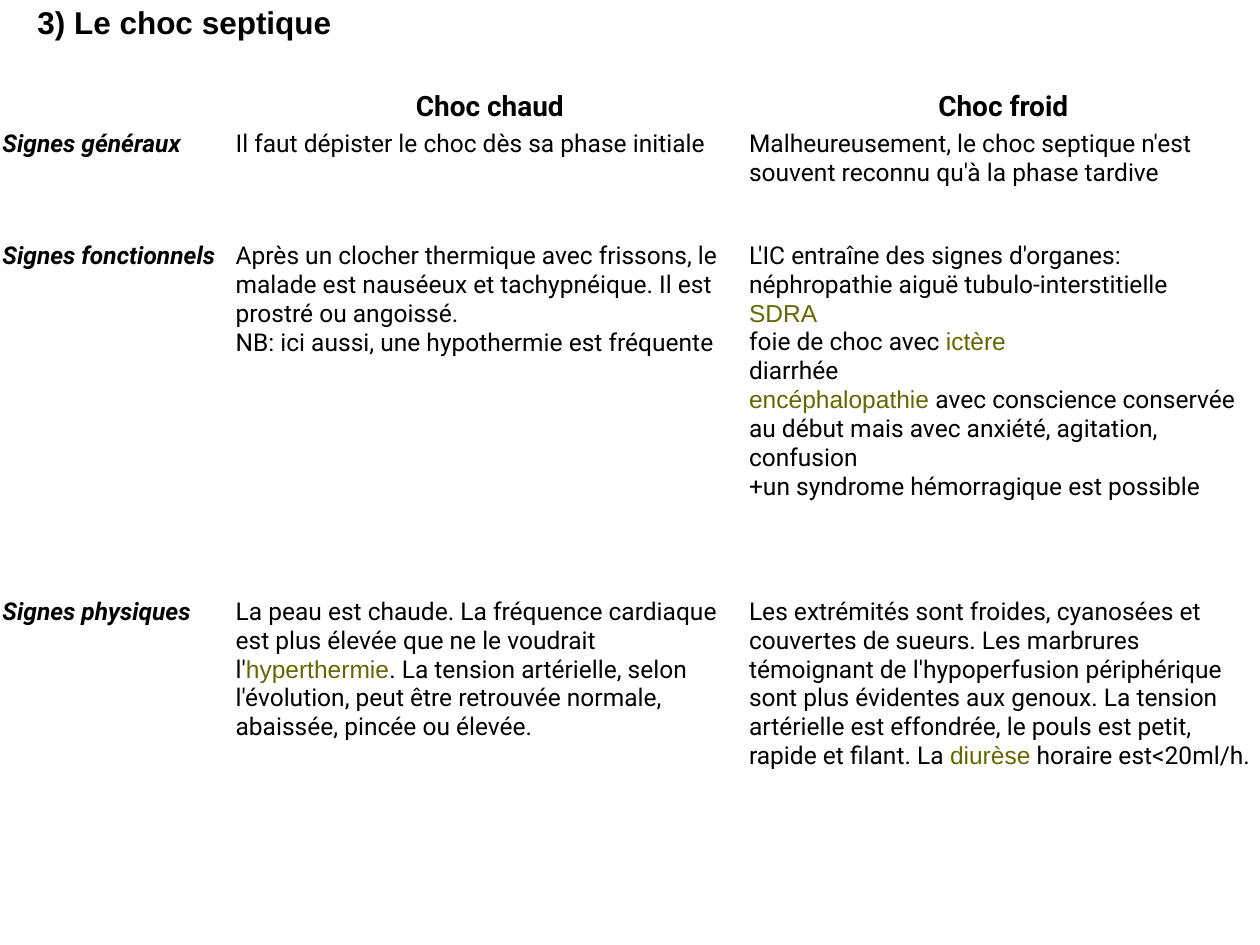
from copy import deepcopy

from pptx import Presentation
from pptx.dml.color import RGBColor
from pptx.enum.text import MSO_ANCHOR as Anchor, PP_ALIGN as Align
from pptx.util import Cm, Pt

COLORS = {"background": "FFFFFF", "text": "000000", "term": "666600"}

# Text between asterisks is a highlighted medical term
ROWS = [
    ["", "Choc chaud", "Choc froid"],
    ["Signes généraux",
     "Il faut dépister le choc dès sa phase initiale",
     "Malheureusement, le choc septique n'est souvent reconnu qu'à la phase tardive"],
    ["Signes fonctionnels",
     "Après un clocher thermique avec frissons, le malade est nauséeux et "
     "tachypnéique. Il est prostré ou angoissé.\n"
     "NB: ici aussi, une hypothermie est fréquente",
     "L'IC entraîne des signes d'organes:\n"
     "néphropathie aiguë tubulo-interstitielle\n"
     "*SDRA\n*foie de choc avec *ictère\n*diarrhée\n"
     "*encéphalopathie* avec conscience conservée au début mais avec anxiété, "
     "agitation, confusion\n"
     "+un syndrome hémorragique est possible"],
    ["Signes physiques",
     "La peau est chaude. La fréquence cardiaque est plus élevée que ne le "
     "voudrait l'*hyperthermie*. La tension artérielle, selon l'évolution, peut "
     "être retrouvée normale, abaissée, pincée ou élevée.",
     "Les extrémités sont froides, cyanosées et couvertes de sueurs. Les marbrures "
     "témoignant de l'hypoperfusion périphérique sont plus évidentes aux genoux. "
     "La tension artérielle est effondrée, le pouls est petit, rapide et filant. "
     "La *diurèse* horaire est<20ml/h."],
]
COLUMN_WIDTHS = [4.7, 10.35, 10.35]
ROW_HEIGHTS = [0.84, 2.26, 7.16, 6.55]


def write_text(frame, text, size=14, font="Roboto", bold=False, italic=False, align=Align.LEFT):
    paragraph = frame.paragraphs[0]
    paragraph.alignment = align
    for index, part in enumerate(text.split("*")):
        is_term = index % 2 == 1
        for line_number, line in enumerate(part.split("\n")):
            if line_number:
                # The break keeps the format of the line it ends
                paragraph.add_line_break()
                paragraph._p[-1].append(deepcopy(run._r.rPr))
            run = paragraph.add_run()
            run.text = line
            run.font.size = Pt(size)
            run.font.name = "Arial" if is_term else font
            run.font.bold = bold
            run.font.italic = italic
            run.font.color.rgb = RGBColor.from_string(COLORS["term" if is_term else "text"])


presentation = Presentation()
presentation.slide_width = Cm(25.4)
presentation.slide_height = Cm(19.05)
slide = presentation.slides.add_slide(presentation.slide_layouts[5])

# Title
title = slide.shapes.title
title.left, title.top, title.width, title.height = Cm(0.5), Cm(0), Cm(24.4), Cm(0.88)
title.text_frame.vertical_anchor = Anchor.MIDDLE
title.text_frame.margin_top = title.text_frame.margin_bottom = Cm(0)
write_text(title.text_frame, "3) Le choc septique", size=18, font="Arial", bold=True)

# Comparison table
table = slide.shapes.add_table(
    len(ROWS), len(COLUMN_WIDTHS), Cm(0), Cm(1.73),
    Cm(sum(COLUMN_WIDTHS)), Cm(sum(ROW_HEIGHTS))).table
table.first_row = table.horz_banding = False
for column, width in zip(table.columns, COLUMN_WIDTHS):
    column.width = Cm(width)

for row_number, (row, height) in enumerate(zip(ROWS, ROW_HEIGHTS)):
    table.rows[row_number].height = Cm(height)
    is_header = row_number == 0
    for column_number, text in enumerate(row):
        is_label = column_number == 0
        cell = table.cell(row_number, column_number)
        cell.fill.solid()
        cell.fill.fore_color.rgb = RGBColor.from_string(COLORS["background"])
        cell.margin_left = cell.margin_right = Cm(0.05)
        cell.margin_top = cell.margin_bottom = Cm(0.05)
        cell.vertical_anchor = Anchor.MIDDLE if is_header else Anchor.TOP
        write_text(cell.text_frame, text, size=16 if is_header else 14,
                   bold=is_header or is_label, italic=is_label,
                   align=Align.CENTER if is_header else Align.LEFT)

presentation.save("out.pptx")
